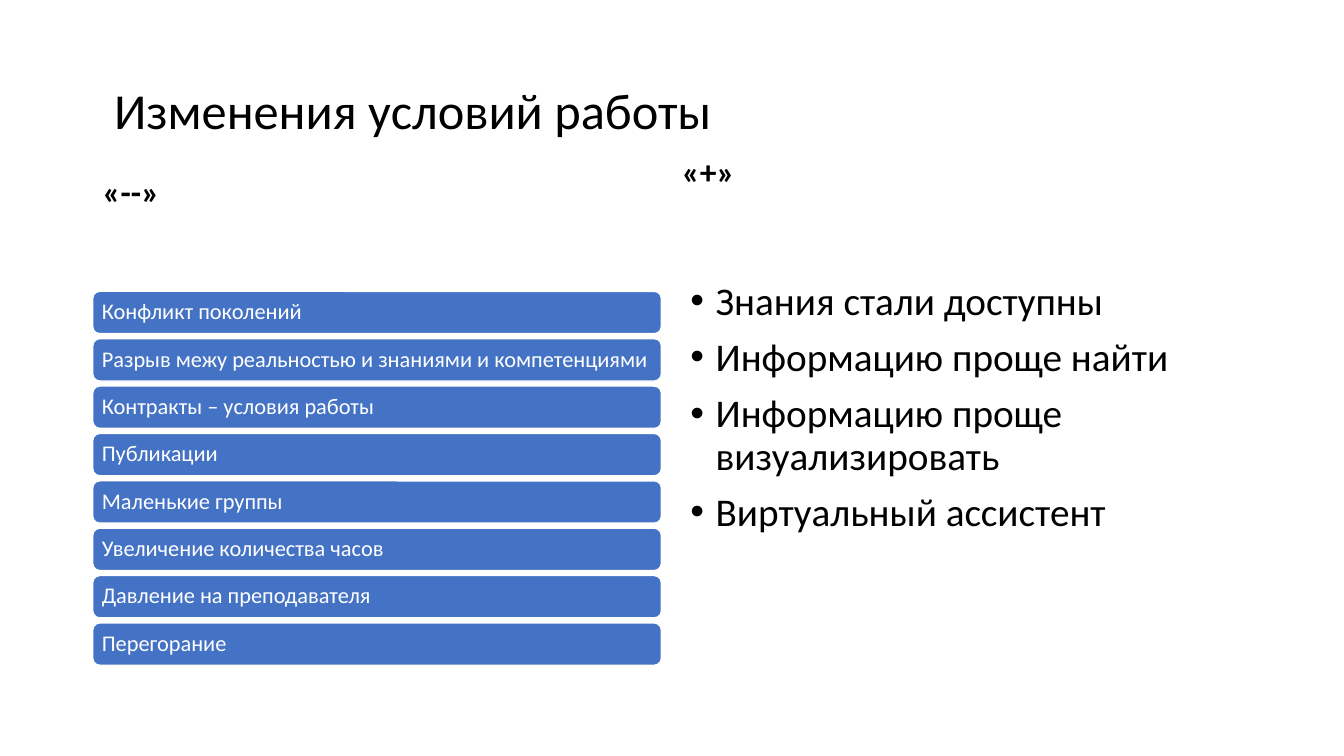
from lxml import etree
from pptx import Presentation
from pptx import util as u
from pptx.dml.color import RGBColor
from pptx.enum import shapes, text
from pptx.oxml.ns import qn

COLOURS = {"text": "000000", "bar": "4472C4", "light": "FFFFFF"}
WIDTH, HEIGHT = 13.33, 7.5
LEFT, COLUMN = 0.92, 5.64
BAR_TOP, BAR_HEIGHT, BAR_PITCH = 2.89, 0.42, 0.47

TITLE = {"size": u.Pt(36)}
HEADING = {"size": u.Pt(24), "bold": True}
LIST = {"size": u.Pt(28)}
BAR = {"size": u.Pt(16)}

DRAWBACKS = [
    "Конфликт поколений",
    "Разрыв межу реальностью и знаниями и компетенциями",
    "Контракты – условия работы",
    "Публикации",
    "Маленькие группы",
    "Увеличение количества часов",
    "Давление на преподавателя",
    "Перегорание",
]
BENEFITS = [
    "Знания стали доступны",
    "Информацию проще найти",
    "Информацию проще визуализировать",
    "Виртуальный ассистент",
]


def colour(name):
    return RGBColor.from_string(COLOURS[name])


def set_attributes(target, values):
    for name, value in values.items():
        setattr(target, name, value)


def add_bullet(paragraph):
    properties = paragraph._p.get_or_add_pPr()
    indent = u.Inches(0.25)
    properties.set("marL", str(indent))
    properties.set("indent", str(-indent))
    etree.SubElement(properties, qn("a:buFont")).set("typeface", "Arial")
    etree.SubElement(properties, qn("a:buChar")).set("char", "•")


def write_lines(frame, lines, font, ink, spacing, bullets=False):
    for index, line in enumerate(lines):
        paragraph = frame.paragraphs[0] if index == 0 else frame.add_paragraph()
        set_attributes(paragraph, {"alignment": text.PP_ALIGN.LEFT, **spacing})
        if bullets:
            add_bullet(paragraph)
        run = paragraph.add_run()
        run.text = line
        set_attributes(run.font, {"name": "Calibri", **font})
        run.font.color.rgb = colour(ink)


def add_text(slide, box, lines, font, anchor, line_spacing, before=0, bullets=False):
    frame = slide.shapes.add_textbox(*map(u.Inches, box)).text_frame
    set_attributes(frame, {"word_wrap": True, "vertical_anchor": anchor})
    spacing = {"line_spacing": line_spacing, "space_before": u.Pt(before)}
    write_lines(frame, lines, font, "text", spacing, bullets)


def add_bar(slide, row, label):
    box = (LEFT, BAR_TOP + row * BAR_PITCH, COLUMN, BAR_HEIGHT)
    bar = slide.shapes.add_shape(
        shapes.MSO_SHAPE.ROUNDED_RECTANGLE, *map(u.Inches, box)
    )
    bar.shadow.inherit = False
    bar.fill.solid()
    bar.fill.fore_color.rgb = colour("bar")
    bar.line.color.rgb = colour("light")
    bar.line.width = u.Pt(1)
    inset = u.Inches(0.07)
    set_attributes(bar.text_frame, {
        "word_wrap": True,
        "vertical_anchor": text.MSO_ANCHOR.MIDDLE,
        "margin_left": inset,
        "margin_right": 0,
        "margin_top": inset,
        "margin_bottom": inset,
    })
    write_lines(bar.text_frame, [label], BAR, "light", {"line_spacing": 0.9})


def main():
    presentation = Presentation()
    presentation.slide_width = u.Inches(WIDTH)
    presentation.slide_height = u.Inches(HEIGHT)
    slide = presentation.slides.add_slide(presentation.slide_layouts[6])
    anchor = text.MSO_ANCHOR

    add_text(slide, (LEFT, 0.4, 11.5, 1.45), [" Изменения условий работы"],
             TITLE, anchor.MIDDLE, 0.9)
    add_text(slide, (LEFT, 1.48, COLUMN, 0.66), ["«--»"],
             HEADING, anchor.BOTTOM, 0.8, 10)
    for row, label in enumerate(DRAWBACKS):
        add_bar(slide, row, label)
    add_text(slide, (WIDTH / 2, 1.48, COLUMN, 0.46), ["«+»"],
             HEADING, anchor.BOTTOM, 0.8, 10)
    add_text(slide, (6.75, 2.74, COLUMN, 4.03), BENEFITS,
             LIST, anchor.TOP, 0.9, 10, bullets=True)

    presentation.save("out.pptx")


if __name__ == "__main__":
    main()
